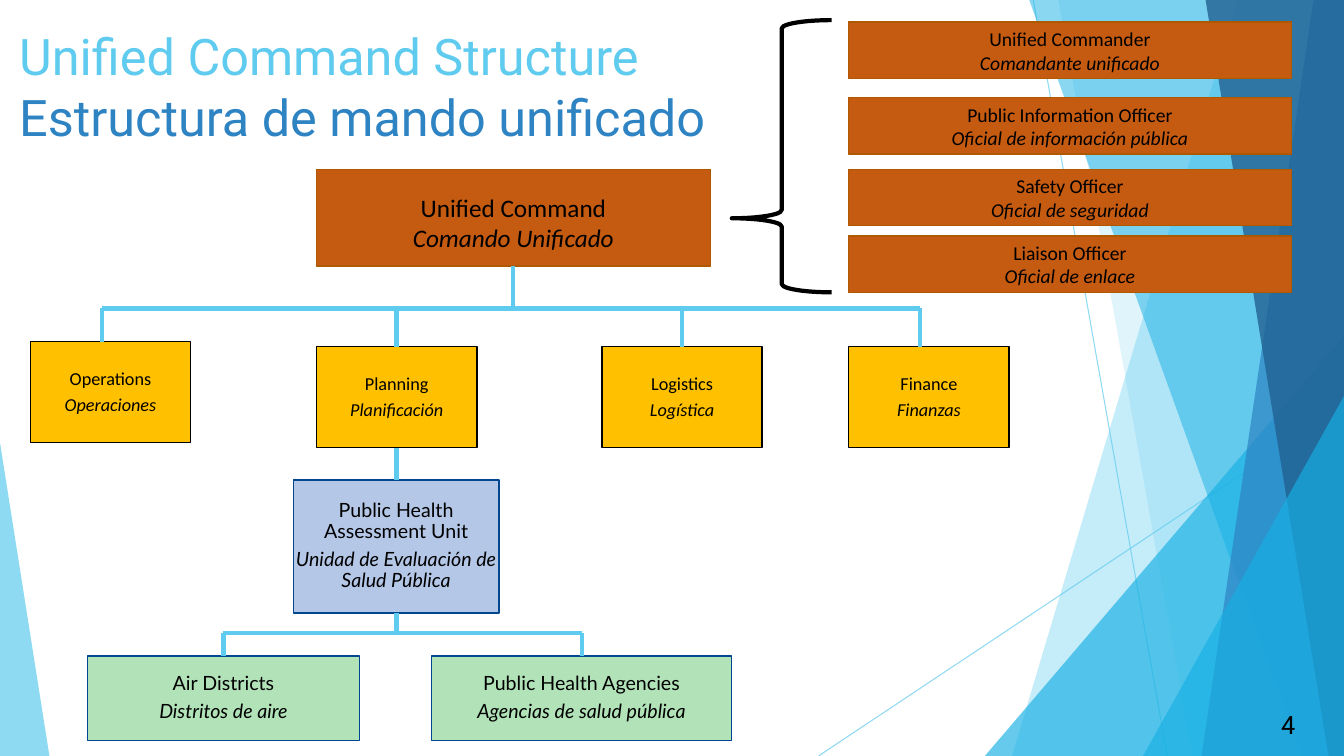
from dataclasses import dataclass

from lxml import etree
from pptx import Presentation
from pptx.dml.color import RGBColor
from pptx.enum.shapes import MSO_CONNECTOR, MSO_SHAPE
from pptx.enum.text import MSO_ANCHOR, MSO_AUTO_SIZE, PP_ALIGN
from pptx.oxml.ns import qn
from pptx.util import Inches, Pt

RECTANGLE, TRIANGLE, BRACE = MSO_SHAPE.RECTANGLE, MSO_SHAPE.ISOSCELES_TRIANGLE, MSO_SHAPE.LEFT_BRACE
STRAIGHT = MSO_CONNECTOR.STRAIGHT
TOP, MIDDLE = MSO_ANCHOR.TOP, MSO_ANCHOR.MIDDLE
LEFT, CENTER = PP_ALIGN.LEFT, PP_ALIGN.CENTER
NO_FIT = MSO_AUTO_SIZE.NONE
TITLE_ONLY = 5
SLIDE_W, SLIDE_H = Inches(13.33), Inches(7.5)


@dataclass(frozen=True)
class Theme:
    sky: str = "5FCBEF"
    cyan: str = "17B0E4"
    blue: str = "2E83C3"
    navy: str = "226292"
    black: str = "000000"
    command: tuple = ("C55A11", "AE5800")
    section: tuple = ("FFC000", "000000")
    unit: tuple = ("B4C7E7", "00478F")
    agency: tuple = ("B1E2B8", "00478F")
    heading: str = "Roboto"
    body: str = "Calibri"
    field: str = "Lato"
    title_size: int = 36
    large: int = 18
    medium: int = 14
    small: int = 13


THEME = Theme()

# Everywhere below, x and widths are percent of slide width, y and heights of slide height.
SECTION_W, SECTION_H = 11.93, 13.33
OFFICER_X, OFFICER_W, OFFICER_H = 63.15, 32.93, 7.47
AGENCY_TOP, AGENCY_H = 86.8, 11.2
COMMAND = (23.55, 22.4, 29.3, 12.8)
UNIT = (21.83, 63.47, 15.3, 17.6)

OFFICERS = [
    (2.93, "Unified Commander", "Comandante unificado"),
    (12.93, "Public Information Officer", "Oficial de información pública"),
    (22.4, "Safety Officer", "Oficial de seguridad"),
    (31.2, "Liaison Officer", "Oficial de enlace"),
]
# left, top, x of the line from above, English, Spanish
SECTIONS = [
    (2.25, 45.2, 7.58, "Operations", "Operaciones"),
    (23.55, 45.87, 29.5, "Planning", "Planificación"),
    (44.78, 45.87, 50.75, "Logistics", "Logística"),
    (63.15, 45.87, 68.48, "Finance", "Finanzas"),
]
# left, width, English, Spanish
AGENCIES = [
    (6.53, 20.2, "Air Districts", "Distritos de aire"),
    (32.1, 22.35, "Public Health Agencies", "Agencias de salud pública"),
]


def across(share):
    return round(SLIDE_W * share / 100)


def down(share):
    return round(SLIDE_H * share / 100)


def area(x, y, w, h):
    return across(x), down(y), across(w), down(h)


def set_alpha(shape, percent):
    """Make the shape's only solid colour partly transparent."""
    color = shape._element.spPr.find(".//" + qn("a:srgbClr"))
    etree.SubElement(color, qn("a:alpha")).set("val", str(percent * 1000))


def add_text(paragraph, text, *, font, size, color=THEME.black, italic=False,
             align=LEFT, line_spacing=1.0, gap=0):
    """Append a run; gap is the space after, as a share of the type size."""
    paragraph.alignment = align
    paragraph.line_spacing = line_spacing
    paragraph.space_before = Pt(0)
    paragraph.space_after = Pt(round(size * gap, 1))
    run = paragraph.add_run()
    run.text = text
    run.font.name = font
    run.font.size = Pt(size)
    run.font.italic = italic
    run.font.color.rgb = RGBColor.from_string(color)


def add_line(slide, start, end, width=3, alpha=None):
    line = slide.shapes.add_connector(
        STRAIGHT, across(start[0]), down(start[1]), across(end[0]), down(end[1]))
    line.line.color.rgb = RGBColor.from_string(THEME.sky)
    line.line.width = Pt(width)
    if alpha:
        set_alpha(line, alpha)
    etree.SubElement(line._element.spPr, qn("a:effectLst"))


def paint_facet(shape, color, alpha):
    shape.shadow.inherit = False
    shape.fill.solid()
    shape.fill.fore_color.rgb = RGBColor.from_string(color)
    shape.line.fill.background()
    set_alpha(shape, alpha)


def add_band(slide, top_x, bottom_x, color, alpha):
    """Draw a full-height facet that reaches the right edge of the slide."""
    outline = slide.shapes.build_freeform(across(top_x), 0)
    outline.add_line_segments(
        [(SLIDE_W, 0), (SLIDE_W, SLIDE_H), (across(bottom_x), SLIDE_H)])
    paint_facet(outline.convert_to_shape(), color, alpha)


def add_corner(slide, x, y, w, apex, color, alpha):
    """Draw a triangle standing on the bottom edge of the slide."""
    corner = slide.shapes.add_shape(TRIANGLE, *area(x, y, w, 100 - y))
    corner.adjustments[0] = apex
    paint_facet(corner, color, alpha)


def add_backdrop(slide):
    add_line(slide, (76.88, 0), (86.85, 100), 0.75, 70)
    add_line(slide, (100, 53.73), (60.9, 100), 0.75, 70)
    add_band(slide, 92.1, 75.3, THEME.sky, 36)
    add_band(slide, 78.75, 88.73, THEME.sky, 20)
    add_corner(slide, 73.28, 44.4, 26.72, 1, THEME.cyan, 66)
    add_band(slide, 76.58, 96.83, THEME.cyan, 50)
    add_band(slide, 97.73, 89.4, THEME.blue, 70)
    add_band(slide, 89.7, 98.85, THEME.navy, 80)
    add_corner(slide, 85.05, 52.4, 14.95, 1, THEME.cyan, 66)
    add_corner(slide, 0, 58.53, 3.68, 0, THEME.sky, 70)


def add_box(slide, place, colors, english, spanish, *, top_inset=0.01, **text_format):
    """Draw a chart box with its English label above the Spanish one in italics."""
    box = slide.shapes.add_shape(RECTANGLE, *area(*place))
    box.shadow.inherit = False
    fill, border = colors
    box.fill.solid()
    box.fill.fore_color.rgb = RGBColor.from_string(fill)
    box.line.color.rgb = RGBColor.from_string(border)
    box.line.width = Pt(1)
    frame = box.text_frame
    frame.word_wrap = True
    frame.vertical_anchor = MIDDLE
    frame.margin_left = frame.margin_right = frame.margin_bottom = Inches(0.01)
    frame.margin_top = Inches(top_inset)
    add_text(frame.paragraphs[0], english, align=CENTER, **text_format)
    add_text(frame.add_paragraph(), spanish, align=CENTER, italic=True, **text_format)


def add_branches(slide, parent_x, parent_bottom, bus_y, drops):
    """Join a parent box to the (x, top) points of the boxes below it."""
    add_line(slide, (parent_x, parent_bottom), (parent_x, bus_y))
    add_line(slide, (drops[0][0], bus_y), (drops[-1][0], bus_y))
    for x, top in drops:
        add_line(slide, (x, bus_y), (x, top))


def add_title(slide):
    title = slide.shapes.title
    title.left, title.top, title.width, title.height = area(0.68, 2.67, 70.5, 19.2)
    frame = title.text_frame
    frame.auto_size = NO_FIT
    frame.word_wrap = True
    frame.vertical_anchor = TOP
    heading = frame.paragraphs[0]
    style = {"font": THEME.heading, "size": THEME.title_size}
    add_text(heading, "Unified Command Structure", color=THEME.sky, **style)
    heading.add_line_break()
    add_text(heading, "Estructura de mando unificado", color=THEME.blue, **style)


def add_brace(slide):
    brace = slide.shapes.add_shape(BRACE, *area(54.45, 2.67, 7.43, 36))
    brace.shadow.inherit = False
    brace.adjustments[0], brace.adjustments[1] = 0.083, 0.728
    brace.fill.background()
    brace.line.color.rgb = RGBColor.from_string(THEME.black)
    brace.line.width = Pt(3)


def add_page_number(slide):
    number = slide.shapes.add_textbox(*area(94.58, 93.2, 5.4, 5.33))
    number.text_frame.word_wrap = True
    add_text(number.text_frame.paragraphs[0], "4", font=THEME.heading, size=THEME.large)


def main():
    deck = Presentation()
    deck.slide_width, deck.slide_height = SLIDE_W, SLIDE_H
    slide = deck.slides.add_slide(deck.slide_layouts[TITLE_ONLY])
    add_backdrop(slide)
    add_title(slide)

    spaced = {"line_spacing": 0.9, "gap": 0.35}
    add_box(slide, COMMAND, THEME.command, "Unified Command", "Comando Unificado",
            top_inset=0.1, font=THEME.body, size=THEME.large)
    for top, english, spanish in OFFICERS:
        add_box(slide, (OFFICER_X, top, OFFICER_W, OFFICER_H), THEME.command,
                english, spanish, font=THEME.body, size=THEME.medium)
    for left, top, _, english, spanish in SECTIONS:
        add_box(slide, (left, top, SECTION_W, SECTION_H), THEME.section,
                english, spanish, font=THEME.body, size=THEME.small, **spaced)
    add_box(slide, UNIT, THEME.unit, "Public Health Assessment Unit",
            "Unidad de Evaluación de Salud Pública",
            font=THEME.field, size=THEME.medium, **spaced)
    for left, width, english, spanish in AGENCIES:
        add_box(slide, (left, AGENCY_TOP, width, AGENCY_H), THEME.agency,
                english, spanish, font=THEME.field, size=THEME.medium, **spaced)

    add_branches(slide, COMMAND[0] + COMMAND[2] / 2, COMMAND[1] + COMMAND[3], 40.8,
                 [(x, top) for _, top, x, _, _ in SECTIONS])
    _, planning_top, planning_x, _, _ = SECTIONS[1]
    add_line(slide, (planning_x, planning_top + SECTION_H), (planning_x, UNIT[1]))
    add_branches(slide, planning_x, UNIT[1] + UNIT[3], 83.73,
                 [(left + width / 2, AGENCY_TOP) for left, width, _, _ in AGENCIES])
    add_brace(slide)
    add_page_number(slide)
    deck.save("out.pptx")


if __name__ == "__main__":
    main()
